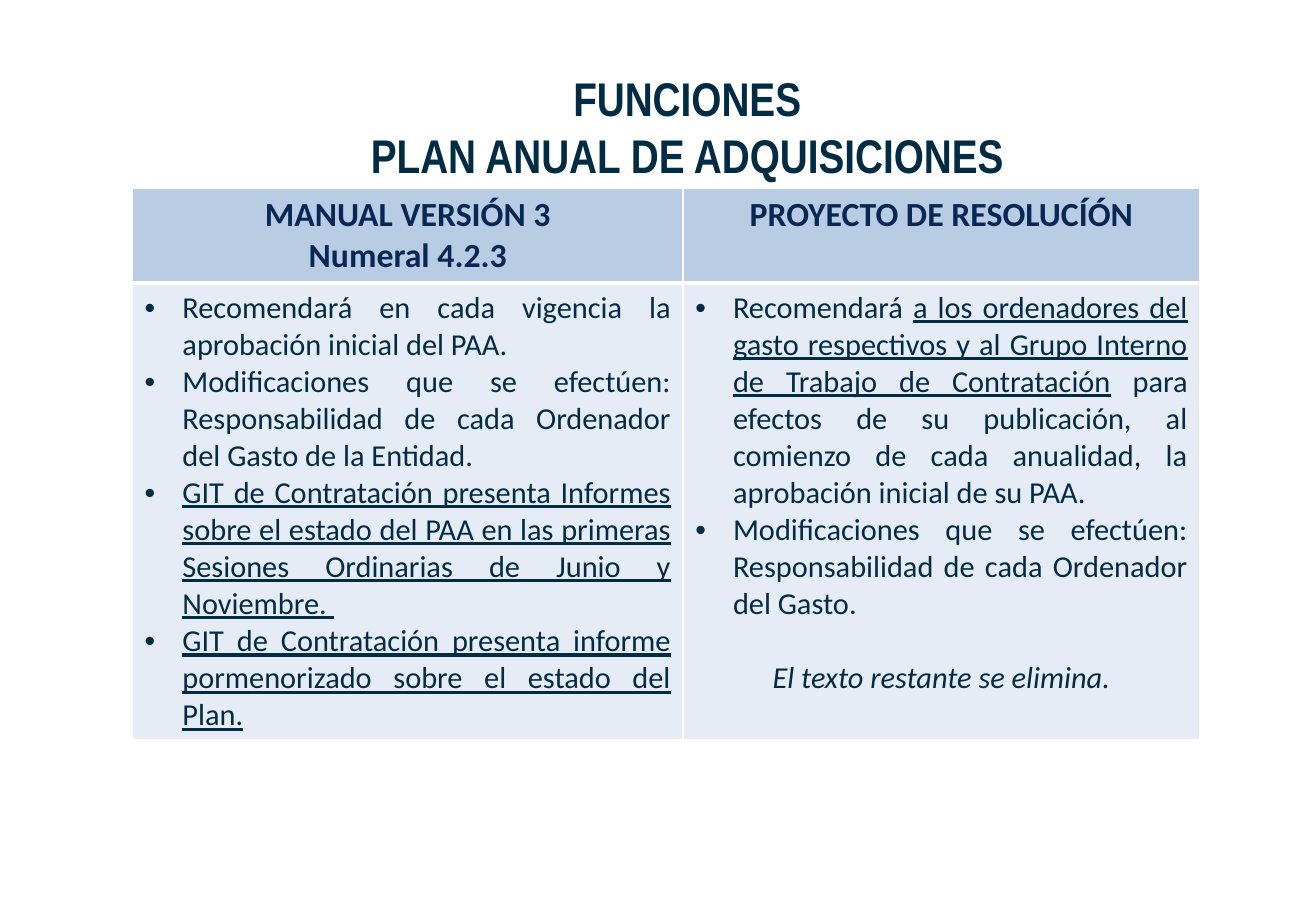
from lxml import etree
from pptx import Presentation
from pptx.dml.color import RGBColor
from pptx.enum.text import MSO_ANCHOR, MSO_AUTO_SIZE, PP_ALIGN
from pptx.oxml.ns import qn
from pptx.util import Cm, Pt

CENTER, JUSTIFY = PP_ALIGN.CENTER, PP_ALIGN.JUSTIFY
MIDDLE = MSO_ANCHOR.MIDDLE
NO_FIT = MSO_AUTO_SIZE.NONE
TITLE_ONLY = 5

COLORS = {
    "text": "022B44",
    "header_text": "082754",
    "header_fill": "B8CCE4",
    "body_fill": "E6ECF5",
    "border": "FFFFFF",
}
TITLE_FONT, TABLE_FONT = "Arial Narrow", "Calibri"

# Each bullet is a list of (text, underlined) spans
HEADERS = [["MANUAL VERSIÓN 3", "Numeral 4.2.3"], ["PROYECTO DE RESOLUCÍÓN"]]
MANUAL = [
    [("Recomendará en cada vigencia la aprobación inicial del PAA. ", False)],
    [("Modificaciones que se efectúen: Responsabilidad de cada Ordenador "
      "del Gasto de la Entidad. ", False)],
    [("GIT de Contratación presenta Informes sobre el estado del PAA en las "
      "primeras Sesiones Ordinarias de Junio y Noviembre. ", True)],
    [("GIT de Contratación presenta informe pormenorizado sobre el estado "
      "del Plan.", True)],
]
RESOLUTION = [
    [("Recomendará ", False),
     ("a los ordenadores del gasto respectivos y al Grupo Interno de Trabajo "
      "de Contratación", True),
     (" para efectos de su publicación, al comienzo de cada anualidad, la "
      "aprobación inicial de su PAA. ", False)],
    [("Modificaciones que se efectúen: Responsabilidad de cada Ordenador "
      "del Gasto.", False)],
]
CLOSING = "El texto restante se elimina."


class SlideBuilder:
    def __init__(self, deck):
        self.page = deck.slides.add_slide(deck.slide_layouts[TITLE_ONLY])

    def style(self, span, size, color, font=TABLE_FONT, bold=False):
        span.font.name, span.font.size, span.font.bold = font, Pt(size), bold
        span.font.color.rgb = RGBColor.from_string(COLORS[color])

    def title(self, text, left, top, width, height):
        box = self.page.shapes.title
        box.left, box.top, box.width, box.height = left, top, width, height
        frame = box.text_frame
        frame.text = text
        frame.auto_size, frame.vertical_anchor = NO_FIT, MIDDLE
        para = frame.paragraphs[0]
        para.alignment = CENTER
        for span in para.runs:
            self.style(span, 28, "text", TITLE_FONT, True)

    def table(self, left, top, widths, heights):
        table = self.page.shapes.add_table(
            len(heights), len(widths), left, top, sum(widths), sum(heights)).table
        table.first_row = table.horz_banding = False
        for column, width in zip(table.columns, widths):
            column.width = width
        for row, height in zip(table.rows, heights):
            row.height = height
        return table

    def cell_format(self, cell, fill, top=1, bottom=1):
        properties = cell._tc.get_or_add_tcPr()
        for side, points in (("L", 1), ("R", 1), ("T", top), ("B", bottom)):
            line = etree.SubElement(properties, qn(f"a:ln{side}"), w=str(Pt(points)))
            solid = etree.SubElement(line, qn("a:solidFill"))
            etree.SubElement(solid, qn("a:srgbClr"), val=COLORS["border"])
        cell.fill.solid()
        cell.fill.fore_color.rgb = RGBColor.from_string(COLORS[fill])

    def header(self, cell, lines):
        self.cell_format(cell, "header_fill", bottom=3)
        cell.text_frame.text = "\n".join(lines)
        for para in cell.text_frame.paragraphs:
            para.alignment = CENTER
            self.style(para.runs[0], 20, "header_text", bold=True)

    def bullets(self, cell, items):
        self.cell_format(cell, "body_fill", top=3)
        frame = cell.text_frame
        for index, item in enumerate(items):
            para = frame.add_paragraph() if index else frame.paragraphs[0]
            para.alignment = JUSTIFY
            properties = para._p.get_or_add_pPr()
            properties.set("marL", str(Cm(0.79)))
            properties.set("indent", str(-Cm(0.79)))
            etree.SubElement(properties, qn("a:buFont"), typeface="Arial")
            etree.SubElement(properties, qn("a:buChar"), char="•")
            for text, underlined in item:
                span = para.add_run()
                span.text = text
                self.style(span, 18, "text")
                span.font.underline = underlined

    def closing(self, cell, text):
        para = cell.text_frame.add_paragraph()
        para.text = text
        para.alignment, para.space_before = CENTER, Pt(22)
        self.style(para.runs[0], 18, "text")
        para.runs[0].font.italic = True


def main():
    deck = Presentation()
    deck.slide_width, deck.slide_height = Cm(27.51), Cm(19.05)
    builder = SlideBuilder(deck)

    # Title
    builder.title("FUNCIONES\vPLAN ANUAL DE ADQUISICIONES",
                  Cm(2.67), Cm(1.73), Cm(23.39), Cm(1.8))

    # Comparison table
    table = builder.table(Cm(2.77), Cm(3.94), [Cm(11.51), Cm(10.8)],
                          [Cm(1.85), Cm(9.55)])
    for column, lines in enumerate(HEADERS):
        builder.header(table.cell(0, column), lines)
    for column, items in enumerate((MANUAL, RESOLUTION)):
        builder.bullets(table.cell(1, column), items)
    builder.closing(table.cell(1, 1), CLOSING)

    deck.save("out.pptx")


if __name__ == "__main__":
    main()
